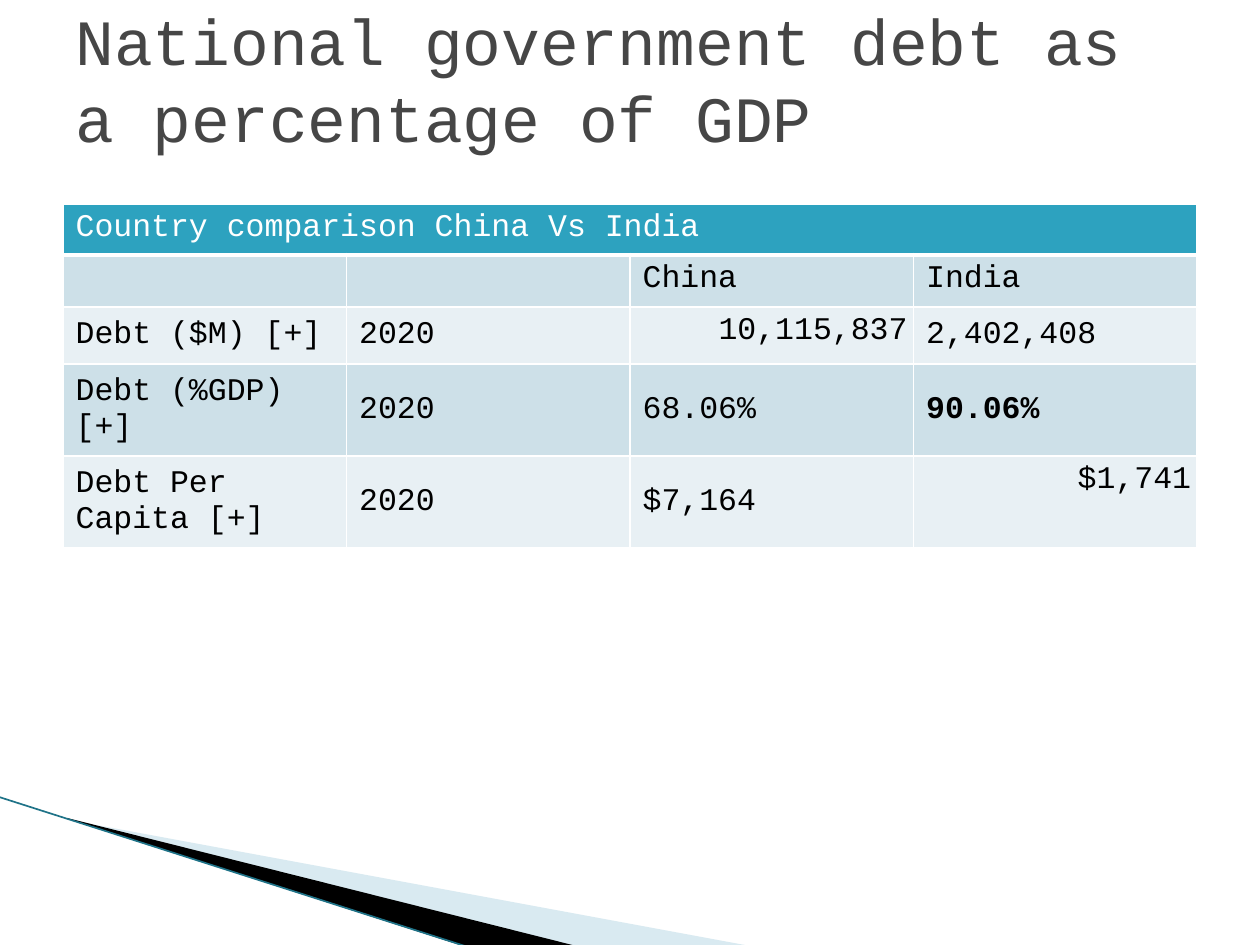
from dataclasses import dataclass

from lxml.etree import SubElement
from pptx import Presentation
from pptx.dml.color import RGBColor
from pptx.enum.shapes import MSO_CONNECTOR
from pptx.enum.text import MSO_ANCHOR, PP_ALIGN
from pptx.oxml import parse_xml
from pptx.oxml.ns import nsdecls, qn
from pptx.util import Pt

EMU_PER_PX = 914400 / 126
TITLE = "National government debt as a percentage of GDP"
HEADING = "Country comparison China Vs India"
ROWS = [
    ["", "", "China", "India"],
    ["Debt ($M) [+]", "2020", "10,115,837", "2,402,408"],
    ["Debt (%GDP) [+]", "2020", "68.06%", "90.06%"],
    ["Debt Per Capita [+]", "2020", "$7,164", "$1,741"],
]
RIGHT_ALIGNED = {"10,115,837", "$1,741"}
BOLD = {"90.06%"}
ROW_HEIGHTS = [51, 52, 57, 92, 92]
TABLE_LEFT, TABLE_TOP, TABLE_WIDTH = 63, 204, 1134
# Each wedge has a frame (left, top, width, height); its outline may reach past it.
PALE_WEDGE = (98, 689, 524, 199), [(69, 820), (750, 946), (575, 946), (69, 819)]
BLACK_WEDGE = (-8, 798, 524, 116), [(67, 818), (576, 946), (469, 948), (68, 819)]
EDGE_LINE = [(-1, 797), (468, 947)]


@dataclass(frozen=True)
class Theme:
    font: str = "Courier New"
    title_size: float = 36.9
    table_size: float = 18
    title: str = "464646"
    white: str = "FFFFFF"
    black: str = "000000"
    header: str = "2DA2BF"
    bands: tuple = ("CDE0E8", "E8F0F4")
    wedge: str = "A0CBDC"
    edge: str = "1F7388"


THEME = Theme()


def px(value):
    return round(value * EMU_PER_PX)


def rgb(color):
    return RGBColor.from_string(color)


def style_text(para, size, color, bold=False):
    for span in para.runs:
        span.font.name = THEME.font
        span.font.size = Pt(size)
        span.font.color.rgb = rgb(color)
        span.font.bold = bold


def set_frame(wedge, frame, points):
    """Give a freeform its own frame while its outline stays in place."""
    left, top, width, height = frame
    outline = next(wedge._element.iter(qn("a:path")))
    outline.set("w", str(width))
    outline.set("h", str(height))
    shift_x = min(x for x, _ in points) - left
    shift_y = min(y for _, y in points) - top
    for point in outline.iter(qn("a:pt")):
        point.set("x", str(int(point.get("x")) + shift_x))
        point.set("y", str(int(point.get("y")) + shift_y))
    wedge.left, wedge.top, wedge.width, wedge.height = map(px, frame)


def add_wedge(slide, frame, points, color, opacity=100):
    builder = slide.shapes.build_freeform(*points[0], scale=EMU_PER_PX)
    builder.add_line_segments(points[1:], close=True)
    wedge = builder.convert_to_shape()
    set_frame(wedge, frame, points)
    wedge.shadow.inherit = False
    wedge.fill.solid()
    wedge.fill.fore_color.rgb = rgb(color)
    wedge.line.fill.background()
    if opacity < 100:
        fill_color = wedge.fill._xPr.find(qn("a:solidFill"))[0]
        SubElement(fill_color, qn("a:alpha"), val=str(opacity * 1000))


def add_edge(slide):
    (x1, y1), (x2, y2) = EDGE_LINE
    edge = slide.shapes.add_connector(MSO_CONNECTOR.STRAIGHT, px(x1), px(y1), px(x2), px(y2))
    edge.line.color.rgb = rgb(THEME.edge)
    edge.line.width = Pt(0.95)
    SubElement(edge._element.spPr, qn("a:effectLst"))


def add_title(slide):
    box = slide.shapes.add_textbox(px(63), px(38), px(1134), px(157))
    frame = box.text_frame
    frame.word_wrap = True
    frame.vertical_anchor = MSO_ANCHOR.MIDDLE
    frame.margin_top, frame.margin_bottom = px(6), px(83)
    frame.text = TITLE
    style_text(frame.paragraphs[0], THEME.title_size, THEME.title)


def paint_cell(cell, color, bottom=1):
    """Fill a cell and rule it in white, with a bottom rule of its own width."""
    cell.fill.solid()
    cell.fill.fore_color.rgb = rgb(color)
    properties = cell._tc.get_or_add_tcPr()
    for index, side in enumerate("LRTB"):
        width = Pt(bottom if side == "B" else 1)
        properties.insert(index, parse_xml(
            f'<a:ln{side} {nsdecls("a")} w="{width}"><a:solidFill>'
            f'<a:srgbClr val="{THEME.white}"/></a:solidFill></a:ln{side}>'))


def fill_body_cell(cell, text, is_label_row):
    cell.text = text
    para = cell.text_frame.paragraphs[0]
    para.font.size = Pt(THEME.table_size)
    style_text(para, THEME.table_size, THEME.black, text in BOLD)
    if text in RIGHT_ALIGNED:
        para.alignment = PP_ALIGN.RIGHT
        cell.margin_left = cell.margin_right = px(6)
    elif not is_label_row:
        cell.vertical_anchor = MSO_ANCHOR.MIDDLE
        cell.margin_top = cell.margin_bottom = px(10)


def add_debt_table(slide):
    column_count = len(ROWS[0])
    table = slide.shapes.add_table(
        len(ROW_HEIGHTS), column_count, px(TABLE_LEFT), px(TABLE_TOP),
        px(TABLE_WIDTH), px(sum(ROW_HEIGHTS))).table
    table.first_row = table.horz_banding = False
    for row, height in zip(table.rows, ROW_HEIGHTS):
        row.height = px(height)

    for column in range(column_count):
        paint_cell(table.cell(0, column), THEME.header, bottom=3)
    heading = table.cell(0, 0)
    heading.merge(table.cell(0, column_count - 1))
    heading.text = HEADING
    style_text(heading.text_frame.paragraphs[0], THEME.table_size, THEME.white)

    for row, texts in enumerate(ROWS):
        for column, text in enumerate(texts):
            cell = table.cell(row + 1, column)
            paint_cell(cell, THEME.bands[row % 2])
            fill_body_cell(cell, text, is_label_row=row == 0)


def main():
    deck = Presentation()
    deck.slide_width, deck.slide_height = px(1260), px(945)
    slide = deck.slides.add_slide(deck.slide_layouts[6])
    add_wedge(slide, *PALE_WEDGE, THEME.wedge, opacity=40)
    add_wedge(slide, *BLACK_WEDGE, THEME.black)
    add_edge(slide)
    add_debt_table(slide)
    add_title(slide)
    deck.save("out.pptx")


if __name__ == "__main__":
    main()
